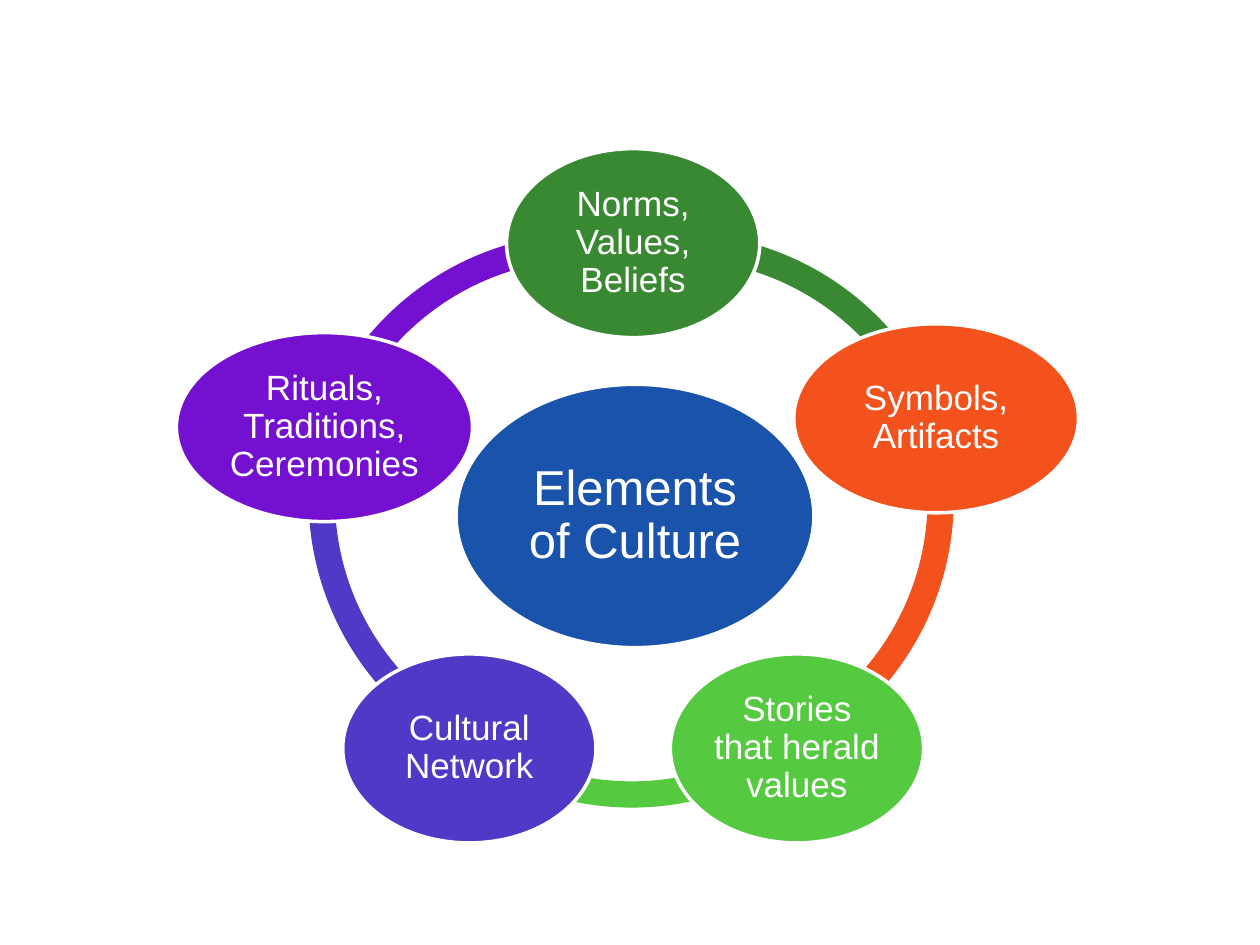
import dataclasses

import pptx
import pptx.dml.color
import pptx.enum.shapes
import pptx.enum.text
import pptx.util

Inches = pptx.util.Inches
Pt = pptx.util.Pt
Shape = pptx.enum.shapes.MSO_SHAPE


@dataclasses.dataclass(frozen=True)
class Theme:
    font: str = "Arial"
    white: str = "FFFFFF"
    blue: str = "1A53AB"
    green: str = "398832"
    orange: str = "F4521D"
    lime: str = "55C940"
    indigo: str = "5039C6"
    purple: str = "7411D0"
    large: int = 28
    small: int = 20
    edge: int = 2


THEME = Theme()
RING = 4.53  # diameter of the circle each arc is cut from
BAND = 0.046  # arc thickness as a share of the diameter
NODE = 1.5  # height of the outer ovals

# left, top, start and end angle in degrees, colour
ARCS = [
    (2.4, 1.85, 199.23, 279.17, THEME.purple),
    (2.45, 1.69, 116.77, 194.97, THEME.indigo),
    (2.75, 1.88, 54, 126, THEME.lime),
    (3.04, 1.7, 342.9, 62.77, THEME.orange),
    (3.1, 1.85, 261.15, 338.76, THEME.green),
]

# left, top, width, colour, label
NODES = [
    (4.02, 1.18, 2.01, THEME.green, "Norms, Values, Beliefs"),
    (6.3, 2.57, 2.26, THEME.orange, "Symbols, Artifacts"),
    (5.32, 5.19, 2.01, THEME.lime, "Stories that herald values"),
    (2.72, 5.19, 2.01, THEME.indigo, "Cultural Network"),
    (1.4, 2.64, 2.35, THEME.purple, "Rituals, Traditions, Ceremonies"),
]


def rgb(code):
    return pptx.dml.color.RGBColor.from_string(code)


def add_form(slide, kind, box, color):
    form = slide.shapes.add_shape(kind, *map(Inches, box))
    form.shadow.inherit = False
    form.fill.solid()
    form.fill.fore_color.rgb = rgb(color)
    return form


def add_arc(slide, left, top, start, end, color):
    arc = add_form(slide, Shape.BLOCK_ARC, (left, top, RING, RING), color)
    arc.line.fill.background()
    # Adjustments count in 100000ths, angles in 60000ths of a degree.
    for i, value in enumerate((start * 0.6, end * 0.6, BAND)):
        arc.adjustments[i] = value


def add_oval(slide, box, color, label, size, inset):
    oval = add_form(slide, Shape.OVAL, box, color)
    oval.line.color.rgb = rgb(THEME.white)
    oval.line.width = Pt(THEME.edge)
    frame = oval.text_frame
    frame.word_wrap = True
    frame.vertical_anchor = pptx.enum.text.MSO_ANCHOR.MIDDLE
    for side in ("left", "top", "right", "bottom"):
        setattr(frame, f"margin_{side}", Inches(inset))
    para = frame.paragraphs[0]
    para.text = label
    para.alignment = pptx.enum.text.PP_ALIGN.CENTER
    para.line_spacing = 0.9
    for name, value in {"name": THEME.font, "size": Pt(size)}.items():
        setattr(para.font, name, value)
    para.font.color.rgb = rgb(THEME.white)


def main():
    deck = pptx.Presentation()
    deck.slide_width, deck.slide_height = Inches(10), Inches(7.5)
    slide = deck.slides.add_slide(deck.slide_layouts[6])
    for arc in ARCS:
        add_arc(slide, *arc)
    add_oval(slide, (3.62, 3.05, 2.84, 2.09), THEME.blue,
             "Elements of Culture", THEME.large, 0.04)
    for left, top, width, color, label in NODES:
        add_oval(slide, (left, top, width, NODE), color,
                 label, THEME.small, 0.03)
    deck.save("out.pptx")


if __name__ == "__main__":
    main()
